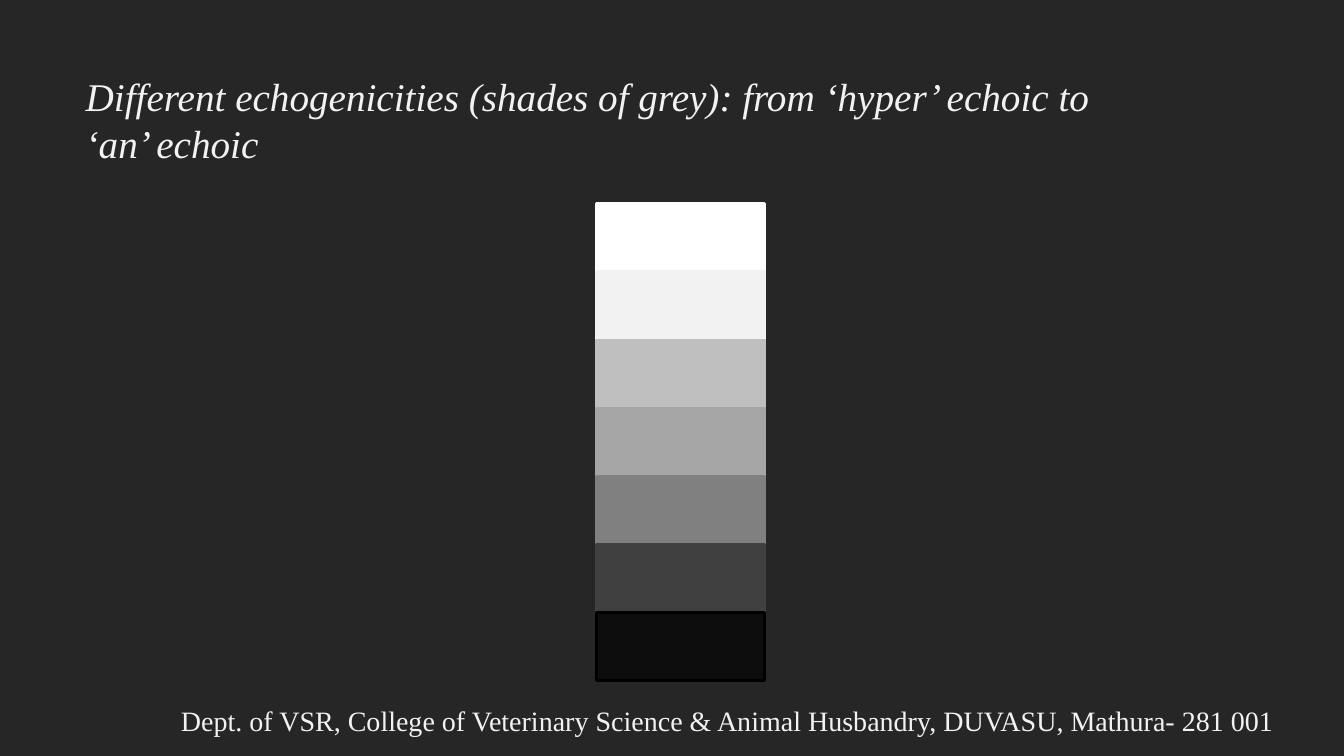
import pptx
import pptx.dml.color
import pptx.enum.shapes
import pptx.enum.text
import pptx.util

Pt = pptx.util.Pt
Align = pptx.enum.text.PP_ALIGN
COLOURS = {"background": "262626", "text": "F2F2F2", "anechoic outline": "000000"}
# Fill of each band, from hyperechoic to anechoic
SHADES = ["FFFFFF", "F2F2F2", "BFBFBF", "A6A6A6", "808080", "404040", "0D0D0D"]
BAND_LEFT, BAND_TOP, BAND_PITCH = 426.2, 145.4, 48.72
BAND_WIDTH, BAND_HEIGHT = 120.2, 48.2


def rgb(value):
    return pptx.dml.color.RGBColor.from_string(value)


def write(shape, text, size, align, italic=False):
    frame = shape.text_frame
    frame.word_wrap = True
    frame.auto_size = pptx.enum.text.MSO_AUTO_SIZE.NONE
    frame.vertical_anchor = pptx.enum.text.MSO_ANCHOR.TOP
    frame.text = text
    paragraph = frame.paragraphs[0]
    paragraph.alignment = align
    paragraph.font.name = "Times New Roman"
    paragraph.font.size = Pt(size)
    paragraph.font.italic = italic
    paragraph.font.color.rgb = rgb(COLOURS["text"])


deck = pptx.Presentation()
deck.slide_width, deck.slide_height = Pt(960), Pt(540)
slide = deck.slides.add_slide(deck.slide_layouts[5])
slide.background.fill.solid()
slide.background.fill.fore_color.rgb = rgb(COLOURS["background"])

title = slide.shapes.title
title.left, title.top, title.width, title.height = Pt(54), Pt(48), Pt(732), Pt(75)
write(title, "Different echogenicities (shades of grey): from ‘hyper’ echoic to ‘an’ echoic",
      28, Align.LEFT, italic=True)

for row, shade in enumerate(SHADES):
    band = slide.shapes.add_shape(
        pptx.enum.shapes.MSO_SHAPE.RECTANGLE,
        Pt(BAND_LEFT), Pt(BAND_TOP + row * BAND_PITCH), Pt(BAND_WIDTH), Pt(BAND_HEIGHT))
    band.shadow.inherit = False
    band.fill.solid()
    band.fill.fore_color.rgb = rgb(shade)
    is_anechoic = row == len(SHADES) - 1
    band.line.color.rgb = rgb(COLOURS["anechoic outline"] if is_anechoic else shade)
    band.line.width = Pt(2)

department = slide.shapes.add_textbox(Pt(111.6), Pt(499), Pt(816), Pt(31.5))
write(department,
      "Dept. of VSR, College of Veterinary Science & Animal Husbandry, DUVASU, Mathura- 281 001",
      20, Align.CENTER)

deck.save("out.pptx")
